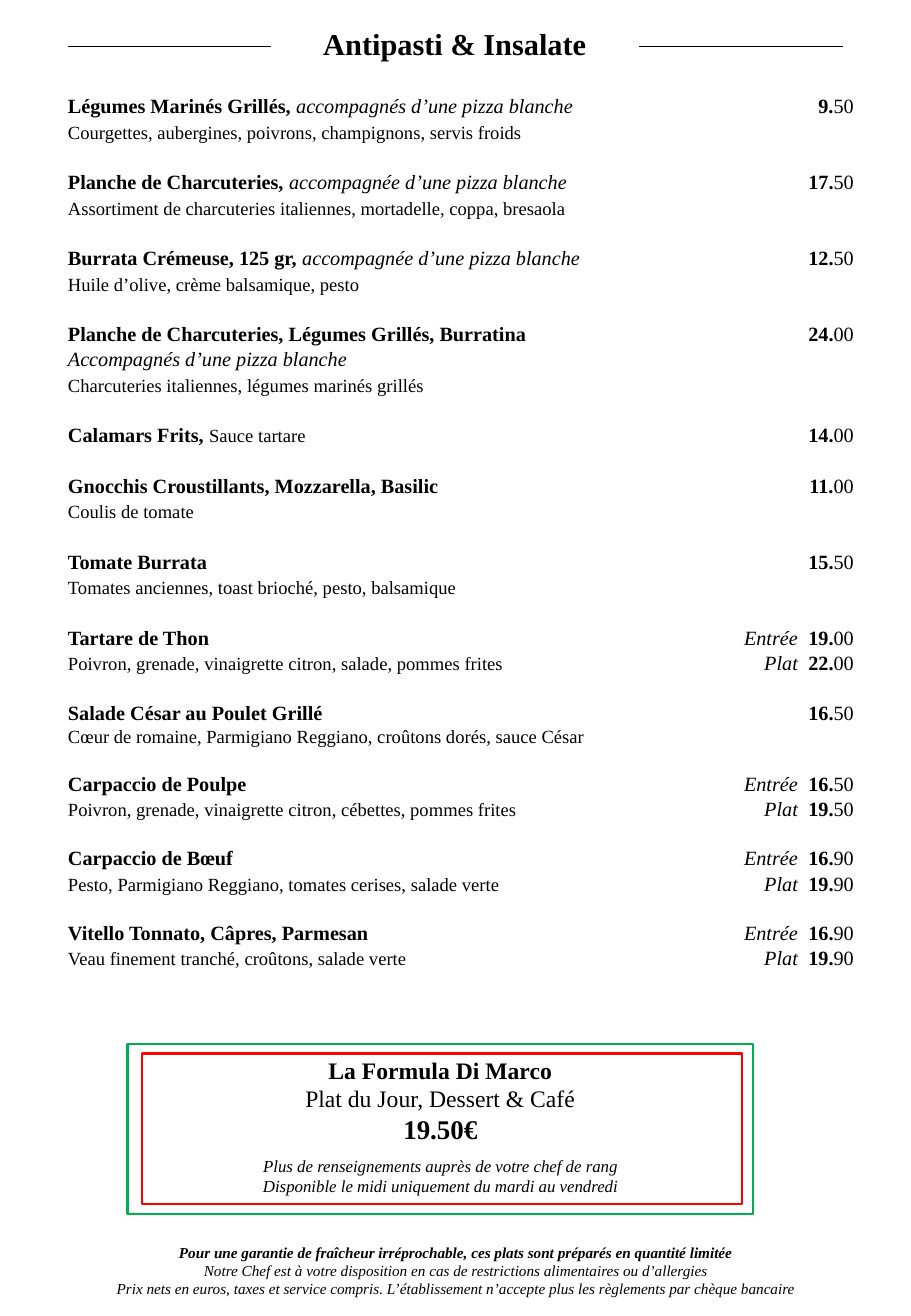
from lxml import etree
from pptx import Presentation
from pptx.dml.color import RGBColor
from pptx.enum.shapes import MSO_CONNECTOR, MSO_SHAPE
from pptx.enum.text import MSO_ANCHOR, PP_ALIGN
from pptx.oxml.ns import qn
from pptx.util import Pt

PX = 9144  # 100 px to the inch
CENTER, TOP = PP_ALIGN.CENTER, MSO_ANCHOR.TOP
RECTANGLE, STRAIGHT = MSO_SHAPE.RECTANGLE, MSO_CONNECTOR.STRAIGHT
FONT = "Times New Roman"
LABEL_STOP, PRICE_STOP = 601, 647

# Text styles: size, bold, italic
NAME, NOTE, DETAIL, CENTS = (12, True, False), (12, False, True), (11, False, False), (12, False, False)


def rgb(value):
    return RGBColor.from_string(value)


def write(paragraph, runs):
    for (size, bold, italic), text in runs:
        run = paragraph.add_run()
        run.text = text
        run.font.name, run.font.size = FONT, Pt(size)
        run.font.bold, run.font.italic = bold, italic
        run.font.color.rgb = rgb("000000")


prs = Presentation()
prs.slide_width, prs.slide_height = 750 * PX, 1083 * PX
slide = prs.slides.add_slide(prs.slide_layouts[6])
shapes = slide.shapes

# Dishes: gap above in points, then lines of (runs, portion, price, single spacing)
dishes = [
    (0, [([(NAME, "Légumes Marinés Grillés, "), (NOTE, "accompagnés d’une pizza blanche")], "", "9.50", False),
         ([(DETAIL, "Courgettes, aubergines, poivrons, champignons, servis froids")], "", "", False)]),
    (15, [([(NAME, "Planche de Charcuteries, "), (NOTE, "accompagnée d’une pizza blanche")], "", "17.50", False),
          ([(DETAIL, "Assortiment de charcuteries italiennes, mortadelle, coppa, bresaola")], "", "", False)]),
    (15, [([(NAME, "Burrata Crémeuse, 125 gr, "), (NOTE, "accompagnée d’une pizza blanche")], "", "12.50", False),
          ([(DETAIL, "Huile d’olive, crème balsamique, pesto")], "", "", False)]),
    (15, [([(NAME, "Planche de Charcuteries, Légumes Grillés, Burratina")], "", "24.00", False),
          ([(NOTE, "Accompagnés d’une pizza blanche")], "", "", False),
          ([(DETAIL, "Charcuteries italiennes, légumes marinés grillés")], "", "", False)]),
    (15, [([(NAME, "Calamars Frits, "), (DETAIL, "Sauce tartare")], "", "14.00", False)]),
    (15, [([(NAME, "Gnocchis Croustillants, Mozzarella, Basilic")], "", "11.00", False),
          ([(DETAIL, "Coulis de tomate")], "", "", False)]),
    (15, [([(NAME, "Tomate Burrata")], "", "15.50", False),
          ([(DETAIL, "Tomates anciennes, toast brioché, pesto, balsamique")], "", "", False)]),
    (15, [([(NAME, "Tartare de Thon")], "Entrée", "19.00", False),
          ([(DETAIL, "Poivron, grenade, vinaigrette citron, salade, pommes frites")], "Plat", "22.00", False)]),
    (15, [([(NAME, "Salade César au Poulet Grillé")], "", "16.50", False),
          ([(DETAIL, "Cœur de romaine, Parmigiano Reggiano, croûtons dorés, sauce César")], "", "", True)]),
    (14.4, [([(NAME, "Carpaccio de Poulpe")], "Entrée", "16.50", True),
            ([(DETAIL, "Poivron, grenade, vinaigrette citron, cébettes, pommes frites")], "Plat", "19.50", True)]),
    (14.4, [([(NAME, "Carpaccio de Bœuf")], "Entrée", "16.90", False),
            ([(DETAIL, "Pesto, Parmigiano Reggiano, tomates cerises, salade verte")], "Plat", "19.90", False)]),
    (14.4, [([(NAME, "Vitello Tonnato, Câpres, Parmesan")], "Entrée", "16.90", False),
            ([(DETAIL, "Veau finement tranché, croûtons, salade verte")], "Plat", "19.90", False)]),
]
menu = shapes.add_textbox(56 * PX, 76 * PX, 663 * PX, 771 * PX).text_frame
menu.word_wrap = True
menu.margin_left = menu.margin_top = menu.margin_right = menu.margin_bottom = 0
paragraph = menu.paragraphs[0]
for gap, lines in dishes:
    for number, (runs, portion, price, single) in enumerate(lines):
        if paragraph is None:
            paragraph = menu.add_paragraph()
        paragraph.line_spacing = 1.0 if single else Pt(15)
        paragraph.space_before = Pt(gap if number == 0 else 0)
        write(paragraph, runs)
        if price:
            stops = [LABEL_STOP, PRICE_STOP] if portion else [PRICE_STOP]
            tabs = etree.SubElement(paragraph._p.get_or_add_pPr(), qn("a:tabLst"))
            for stop in stops:
                etree.SubElement(tabs, qn("a:tab"), pos=str(stop * PX), algn="r")
            if portion:
                write(paragraph, [(NOTE, "\t" + portion)])
            euros, cents = price.split(".")
            write(paragraph, [(NAME, "\t" + euros + "."), (CENTS, cents)])
        paragraph = None

# Heading on its rule
rule = shapes.add_connector(STRAIGHT, 56 * PX, 38 * PX, 694 * PX, 38 * PX)
rule.line.color.rgb = rgb("000000")
rule.line.width = Pt(0.5)
etree.SubElement(rule._element.spPr, qn("a:effectLst"))
heading = shapes.add_shape(RECTANGLE, 223 * PX, 16 * PX, 303 * PX, 40 * PX)
heading.shadow.inherit = False
heading.fill.solid()
heading.fill.fore_color.rgb = rgb("FFFFFF")
heading.line.fill.background()
heading.text_frame.word_wrap = False
heading.text_frame.vertical_anchor = TOP
heading.text_frame.paragraphs[0].alignment = CENTER
write(heading.text_frame.paragraphs[0], [((18, True, False), "Antipasti & Insalate")])

# Set menu in a double frame
frames = []
for left, top, width, height, color in [(105, 859, 515, 140, "00B050"), (117, 867, 494, 124, "FF0000")]:
    frame = shapes.add_shape(RECTANGLE, left * PX, top * PX, width * PX, height * PX)
    frame.shadow.inherit = False
    frame.fill.background()
    frame.line.color.rgb = rgb(color)
    frame.line.width = Pt(1.5)
    frames.append(frame)
formula = frames[0].text_frame
formula.word_wrap = True
formula.vertical_anchor = TOP
formula.margin_top = 10 * PX

# Closing notes
notes = shapes.add_textbox(0, 1018 * PX, 750 * PX, 56 * PX).text_frame
notes.word_wrap = True

centred_texts = [
    (formula, [((14, True, False), "La Formula Di Marco", 0),
               ((14, False, False), "Plat du Jour, Dessert & Café", 0),
               ((16, True, False), "19.50€", 6),
               ((10, False, True), "Plus de renseignements auprès de votre chef de rang", 0),
               ((10, False, True), "Disponible le midi uniquement du mardi au vendredi", 0)]),
    (notes, [((9, True, True), "Pour une garantie de fraîcheur irréprochable, "
              "ces plats sont préparés en quantité limitée", 0),
             ((9, False, True), "Notre Chef est à votre disposition en cas de "
              "restrictions alimentaires ou d’allergies", 0),
             ((9, False, True), "Prix nets en euros, taxes et service compris. "
              "L’établissement n’accepte plus les règlements par chèque bancaire", 0)]),
]
for block, lines in centred_texts:
    for number, (style, text, space) in enumerate(lines):
        paragraph = block.add_paragraph() if number else block.paragraphs[0]
        paragraph.alignment = CENTER
        paragraph.space_after = Pt(space)
        write(paragraph, [(style, text)])

prs.save("out.pptx")
